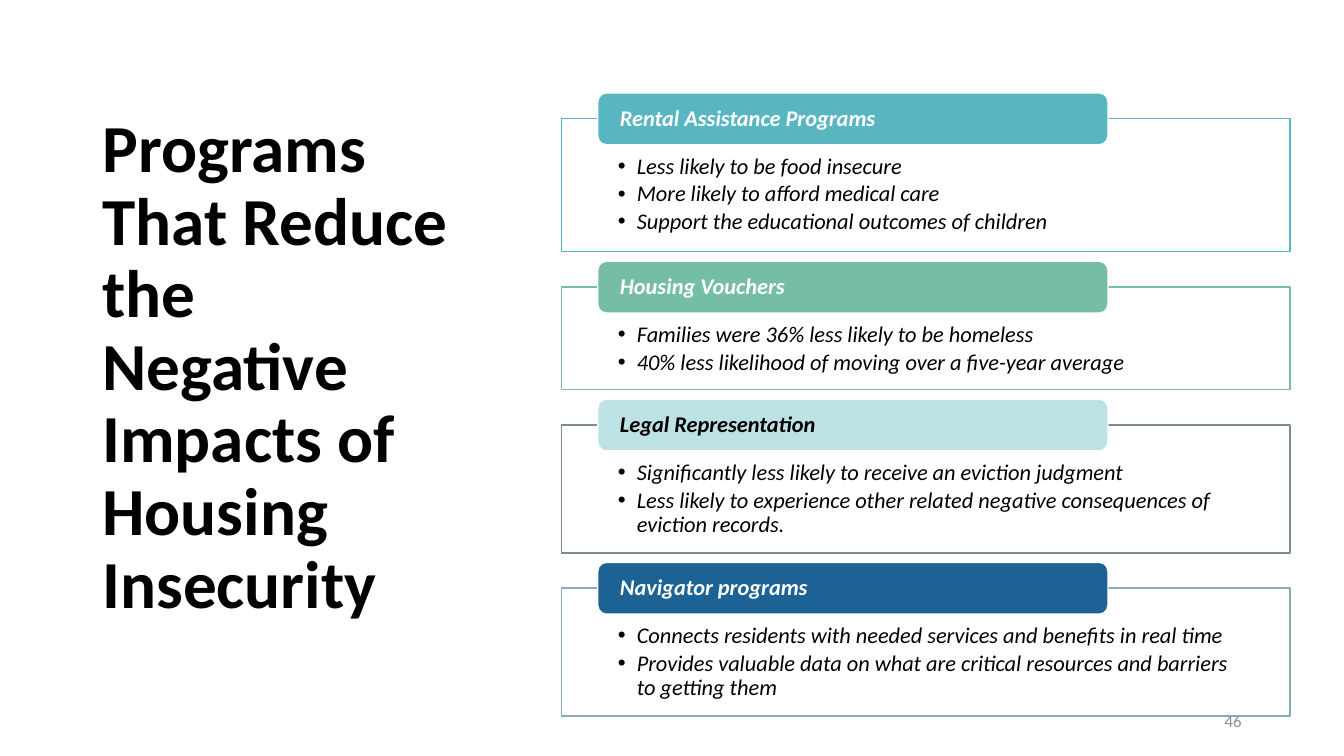
from lxml.etree import SubElement
from pptx import Presentation
from pptx.dml.color import RGBColor
from pptx.enum.shapes import MSO_SHAPE
from pptx.enum.text import MSO_ANCHOR, MSO_AUTO_SIZE, PP_ALIGN
from pptx.oxml.ns import qn
from pptx.util import Pt

GAP = 25.2
ITEM = {"size": Pt(16), "italic": True, "bold": False}
HEAD = {"size": Pt(16), "italic": True, "bold": True}
PROGRAMS = [
    ("Rental Assistance Programs", "58B6C0", "FFFFFF", "58B6C0", 95,
     ["Less likely to be food insecure",
      "More likely to afford medical care",
      "Support the educational outcomes of children"]),
    ("Housing Vouchers", "75BDA7", "FFFFFF", "75BDA7", 73.3,
     ["Families were 36% less likely to be homeless",
      "40% less likelihood of moving over a five-year average"]),
    ("Legal Representation", "BCE2E6", "000000", "7A8C8E", 91.4,
     ["Significantly less likely to receive an eviction judgment",
      "Less likely to experience other related negative consequences "
      "of eviction records."]),
    ("Navigator programs", "1D6294", "FFFFFF", "84ACB6", 91.4,
     ["Connects residents with needed services and benefits in real time",
      "Provides valuable data on what are critical resources and barriers "
      "to getting them"]),
]


def paint(part, color):
    """Colour a font, or make a fill solid in that colour."""
    if hasattr(part, "solid"):
        part.solid()
        part = part.fore_color
    else:
        part = part.color
    part.rgb = RGBColor.from_string(color)


def apply(target, values):
    for name, value in values.items():
        setattr(target, name, value)


def place(shape, left, top, width, height):
    apply(shape, {"left": Pt(left), "top": Pt(top),
                  "width": Pt(width), "height": Pt(height)})


def write(para, text, color, font, spacing=0.9, after=0):
    apply(para, {"line_spacing": spacing, "space_before": Pt(0),
                 "space_after": Pt(after)})
    run = para.add_run()
    run.text = text
    apply(run.font, {"name": "Calibri", **font})
    paint(run.font, color)


def bullet(para):
    props = para._p.get_or_add_pPr()
    props.set("marL", str(Pt(13.5)))
    props.set("indent", str(Pt(-13.5)))
    SubElement(props, qn("a:buFont"), typeface="Arial")
    SubElement(props, qn("a:buChar"), char="•")


def heading(title, left, top, width, height):
    place(title, left, top, width, height)
    apply(title.text_frame, {"auto_size": MSO_AUTO_SIZE.NONE, "word_wrap": True,
                             "vertical_anchor": MSO_ANCHOR.MIDDLE})
    para = title.text_frame.paragraphs[0]
    para.alignment = PP_ALIGN.LEFT
    write(para, "Programs That Reduce the Negative Impacts of Housing Insecurity",
          "000000", {"size": Pt(48), "bold": True})


def number(slide, left, top, width, height):
    """Put the page number behind the framed lists."""
    box = slide.shapes.add_textbox(Pt(left), Pt(top), Pt(width), Pt(height))
    apply(box.text_frame, {"word_wrap": True, "vertical_anchor": MSO_ANCHOR.MIDDLE})
    para = box.text_frame.paragraphs[0]
    para.alignment = PP_ALIGN.RIGHT
    write(para, "46", "8C8C8C", {"size": Pt(12)}, spacing=1)
    slide.shapes._spTree.insert(2, box._element)


def items(frame, lines, edge, left, top, width, height):
    place(frame, left, top, width, height)
    paint(frame.fill, "FFFFFF")
    tint = frame._element.spPr.find(qn("a:solidFill"))[0]
    SubElement(tint, qn("a:alpha"), val="90000")
    paint(frame.line.fill, edge)
    frame.line.width = Pt(1)
    body = frame.text_frame
    apply(body, {"auto_size": MSO_AUTO_SIZE.NONE, "word_wrap": True,
                 "vertical_anchor": MSO_ANCHOR.TOP,
                 "margin_left": Pt(40.4), "margin_right": Pt(40.4),
                 "margin_top": Pt(26), "margin_bottom": Pt(8.6)})
    for i, line in enumerate(lines):
        para = body.add_paragraph() if i else body.paragraphs[0]
        bullet(para)
        write(para, line, "000000", ITEM, after=2.4)


def label(slide, text, fill, color, left, top, width, height):
    tab = slide.shapes.add_shape(MSO_SHAPE.ROUNDED_RECTANGLE, Pt(left), Pt(top),
                                 Pt(width), Pt(height))
    tab.shadow.inherit = False
    paint(tab.fill, fill)
    paint(tab.line.fill, "FFFFFF")
    tab.line.width = Pt(1)
    apply(tab.text_frame, {"word_wrap": True, "vertical_anchor": MSO_ANCHOR.MIDDLE,
                           "margin_left": Pt(14), "margin_right": Pt(14),
                           "margin_top": 0, "margin_bottom": 0})
    para = tab.text_frame.paragraphs[0]
    para.alignment = PP_ALIGN.LEFT
    write(para, text, color, HEAD)


def panels(slide, left, top, width):
    """Stack the labelled lists downward, the first frame starting at top."""
    frames = [p for p in slide.placeholders if p.placeholder_format.idx in range(1, 5)]
    for frame, (name, fill, color, edge, height, lines) in zip(frames, PROGRAMS):
        items(frame, lines, edge, left, top, width, height)
        label(slide, name, fill, color, left + 26, top - 18.4, width * 0.7, 37)
        top += height + GAP


def main():
    deck = Presentation()
    apply(deck, {"slide_width": Pt(960), "slide_height": Pt(540)})
    slide = deck.slides.add_slide(deck.slide_layouts.get_by_name("Comparison"))
    heading(slide.shapes.title, 66, 44, 266, 438.5)
    number(slide, 678, 500.5, 216, 28.8)
    panels(slide, 401, 84.8, 520.6)
    deck.save("out.pptx")


if __name__ == "__main__":
    main()
